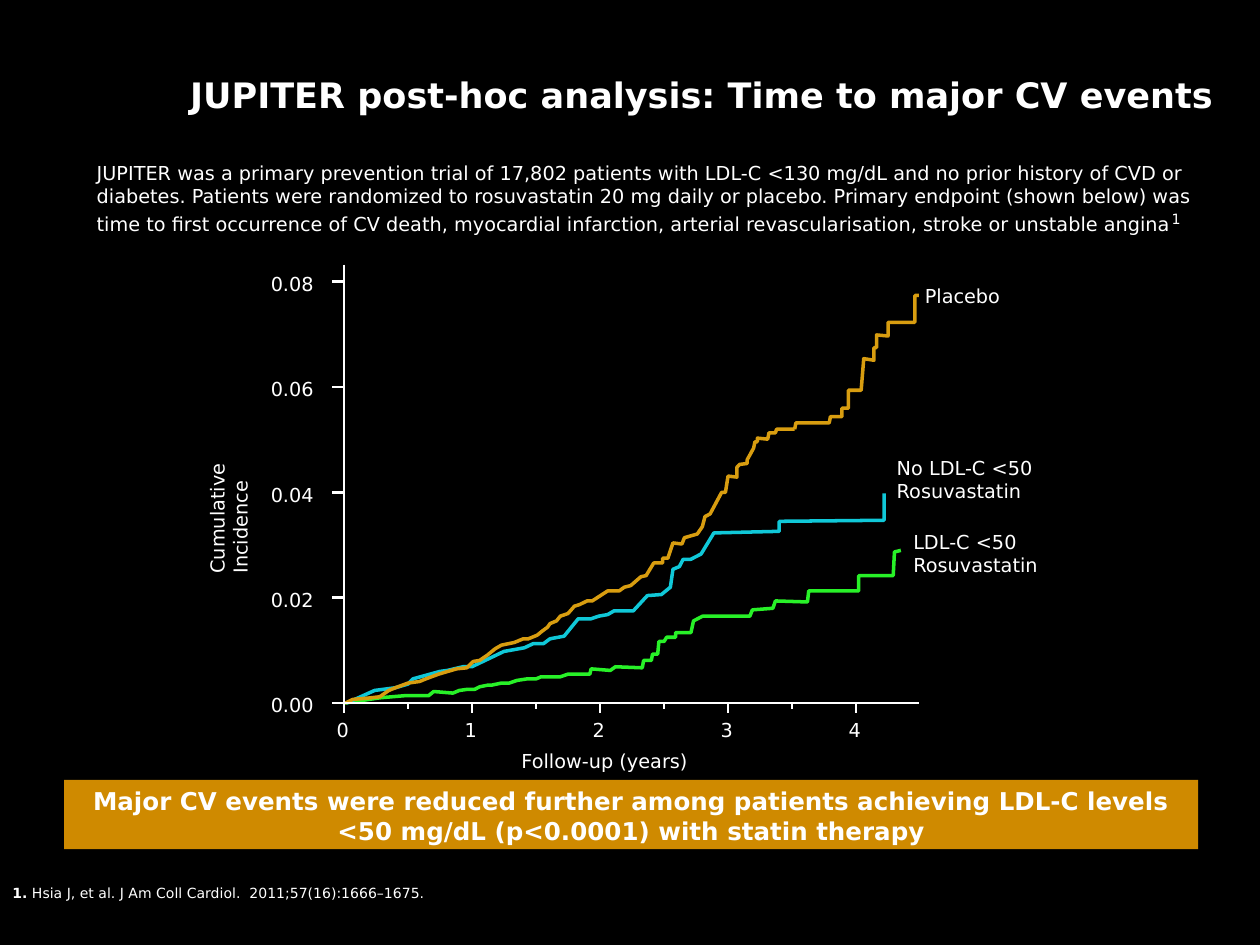
"""Build a slide with the cumulative incidence curves of the JUPITER trial."""
from typing import NamedTuple

from lxml.etree import SubElement
from pptx import Presentation
from pptx.dml.color import RGBColor
from pptx.enum.shapes import MSO_CONNECTOR, MSO_SHAPE
from pptx.enum.text import MSO_ANCHOR, PP_ALIGN
from pptx.oxml.ns import qn
from pptx.util import Pt

BLACK = RGBColor(0x00, 0x00, 0x00)
WHITE = RGBColor(0xFF, 0xFF, 0xFF)
AMBER = RGBColor(0xCF, 0x8A, 0x00)
GOLD = RGBColor(0xD8, 0x9D, 0x10)
CYAN = RGBColor(0x10, 0xC8, 0xD8)
GREEN = RGBColor(0x28, 0xF1, 0x28)
FONT = "DejaVu Sans"

LEFT, RIGHT, TOP, BASE = 196.6, 524.9, 151.2, 401.8
YEAR, MILLE = 73.15, 3.01
YEARS, RATES = range(5), range(0, 81, 20)
LONG, SHORT, STUB = 5.8, 3.6, 6.6
LINE = 18.7


class Label(NamedTuple):
    """A text with its box in points."""
    text: str
    x: float
    y: float
    wide: float
    high: float = LINE
    size: float = 11
    align: PP_ALIGN = PP_ALIGN.LEFT
    bold: bool = False
    turn: float = 0
    anchor: MSO_ANCHOR = MSO_ANCHOR.TOP


class Curve(NamedTuple):
    """Pairs of follow-up years and events per thousand patients."""
    color: RGBColor
    data: list


class Tag(NamedTuple):
    """A name set beside the last value of a curve."""
    text: str
    curve: Curve
    shift: float
    lift: float
    wide: float
    high: float


LOW = Curve(GREEN, [
    (0, 0), (0.28, 1), (0.47, 1.4), (0.66, 1.4), (0.7, 2.2), (0.85, 1.9),
    (0.9, 2.4), (0.96, 2.6), (1.02, 2.6), (1.06, 3.1), (1.12, 3.4), (1.15, 3.4),
    (1.23, 3.8), (1.29, 3.8), (1.35, 4.3), (1.43, 4.6), (1.5, 4.6), (1.54, 5),
    (1.69, 5), (1.75, 5.5), (1.92, 5.5), (1.93, 6.5), (2.08, 6.2), (2.12, 6.9),
    (2.33, 6.7), (2.34, 8.1), (2.4, 8.1), (2.41, 9.3), (2.45, 9.3), (2.46, 11.7),
    (2.5, 11.7), (2.52, 12.5), (2.59, 12.5), (2.59, 13.4), (2.71, 13.4),
    (2.73, 15.6), (2.8, 16.5), (3.17, 16.5), (3.19, 17.7), (3.35, 18),
    (3.37, 19.4), (3.62, 19.2), (3.63, 21.3), (4.02, 21.3), (4.02, 24.2),
    (4.29, 24.2), (4.3, 28.7), (4.35, 29)])
HIGH = Curve(CYAN, [
    (0.02, 0), (0.24, 2.4), (0.4, 2.9), (0.5, 3.6), (0.54, 4.6), (0.75, 6),
    (0.81, 6.2), (0.93, 6.9), (1, 6.9), (1.25, 9.8), (1.41, 10.5), (1.48, 11.3),
    (1.56, 11.3), (1.61, 12.2), (1.72, 12.7), (1.83, 16), (1.93, 16),
    (1.99, 16.5), (2.06, 16.8), (2.11, 17.5), (2.26, 17.5), (2.37, 20.4),
    (2.48, 20.6), (2.55, 22), (2.57, 25.4), (2.62, 25.9), (2.65, 27.3),
    (2.71, 27.3), (2.79, 28.3), (2.89, 32.3), (3.4, 32.6), (3.4, 34.5),
    (4.22, 34.7), (4.22, 39.8)])
EARLY = Curve(GOLD, [
    (0.01, 0), (0.07, 0.7), (0.21, 1), (0.28, 1.2), (0.35, 2.4), (0.4, 2.9),
    (0.5, 3.8), (0.59, 4.1), (0.64, 4.6), (0.74, 5.5), (0.81, 6), (0.88, 6.5),
    (0.96, 6.7), (1.01, 7.9), (1.06, 8.1), (1.12, 9.1), (1.18, 10.3), (1.23, 11),
    (1.33, 11.5), (1.4, 12.2), (1.44, 12.2), (1.51, 12.9), (1.55, 13.7),
    (1.59, 14.4), (1.61, 15.1), (1.66, 15.6), (1.69, 16.5), (1.75, 17),
    (1.8, 18.4), (1.84, 18.7), (1.9, 19.4), (1.94, 19.4), (2.06, 21.3),
    (2.15, 21.3), (2.19, 22), (2.24, 22.3), (2.32, 24), (2.36, 24.2),
    (2.42, 26.6), (2.49, 26.6), (2.49, 27.5), (2.53, 27.5), (2.57, 30.4),
    (2.64, 30.2), (2.66, 31.4), (2.76, 32.1), (2.8, 33.5), (2.82, 35.4),
    (2.86, 35.9), (2.95, 40), (2.98, 40), (3, 43.1), (3.07, 42.9), (3.07, 44.8),
    (3.09, 45.3), (3.15, 45.5), (3.15, 46.2), (3.2, 48.4), (3.21, 49.6),
    (3.23, 49.6), (3.23, 50.3), (3.31, 50.1), (3.32, 51.3), (3.37, 51.3),
    (3.38, 52), (3.52, 52)])
LATE = Curve(GOLD, [
    (3.52, 52), (3.53, 53.2), (3.79, 53.2), (3.8, 54.4), (3.89, 54.4), (3.89, 56),
    (3.94, 56), (3.94, 59.4), (4.04, 59.4), (4.06, 65.4), (4.14, 65.1),
    (4.14, 67.5), (4.16, 67.5), (4.16, 69.9), (4.25, 69.7), (4.25, 72.3),
    (4.46, 72.3), (4.46, 77.4), (4.49, 77.4)])
TAGS = [Tag("Placebo", LATE, -3.7, 9.7, 60, LINE),
        Tag("No LDL-C <50 Rosuvastatin", HIGH, 0, 25, 109.4, 33.8),
        Tag("LDL-C <50 Rosuvastatin", LOW, 0, 15, 91.4, 33.8)]

TITLE = Label("JUPITER post-hoc analysis: Time to major CV events",
              93.6, 9, 607, 90, 20, PP_ALIGN.RIGHT, True, 0, MSO_ANCHOR.MIDDLE)
CLAIM = Label("Major CV events were reduced further among patients achieving "
              "LDL-C levels <50 mg/dL (p<0.0001) with statin therapy",
              36.7, 445.7, 648, 39.6, 14, PP_ALIGN.CENTER, True)
CITE = Label("1.", 0, 501.8, 680.4, 22.3, 8)
SOURCE = " Hsia J, et al. J Am Coll Cardiol.  2011;57(16):1666–1675."
INTRO = Label(
    "JUPITER was a primary prevention trial of 17,802 patients with LDL-C <130 mg/dL "
    "and no prior history of CVD or diabetes. Patients were randomized to rosuvastatin "
    "20 mg daily or placebo. Primary endpoint (shown below) was time to first occurrence "
    "of CV death, myocardial infarction, arterial revascularisation, stroke or "
    "unstable angina", 48.2, 88.6, 652.3, 64.8)
RATE = Label("Cumulative Incidence", 61.9, 262.1, 124.6, 20.9, turn=270)
TIME = Label("Follow-up (years)", 290.9, 424.8, 116)


def across(year: float) -> float:
    """Turn follow-up years into a place from the left."""
    return LEFT + year * YEAR


def down(rate: float) -> float:
    """Turn events per thousand into a place from the top."""
    return BASE - rate * MILLE


def write(shape, label: Label):
    """Put the text of a label into a shape and return its paragraph."""
    frame = shape.text_frame
    frame.word_wrap = True
    frame.vertical_anchor = label.anchor
    para = frame.paragraphs[0]
    para.text, para.alignment = label.text, label.align
    font = para.font
    font.name, font.size, font.bold = FONT, Pt(label.size), label.bold
    font.color.rgb = WHITE
    return para


def place(slide, label: Label):
    """Add a label as a text box and return its paragraph."""
    box = slide.shapes.add_textbox(*map(Pt, label[1:5]))
    box.rotation = label.turn
    return write(box, label)


def trace(slide, curve: Curve) -> None:
    """Draw the data of a curve as an open outline."""
    first, *rest = [(Pt(across(year)), Pt(down(rate))) for year, rate in curve.data]
    pen = slide.shapes.build_freeform(*first)
    pen.add_line_segments(rest, close=False)
    shape = pen.convert_to_shape()
    shape.shadow.inherit = False
    shape.fill.background()
    shape.line.color.rgb, shape.line.width = curve.color, Pt(2)


def rule(slide, x1: float, y1: float, x2: float, y2: float) -> None:
    """Draw a straight axis line or tick."""
    line = slide.shapes.add_connector(MSO_CONNECTOR.STRAIGHT, *map(Pt, (x1, y1, x2, y2)))
    line.line.color.rgb, line.line.width = WHITE, Pt(1.5)
    SubElement(line._element.spPr, qn("a:effectLst"))


def axes(slide) -> None:
    """Draw both axes with their ticks, values and titles."""
    rule(slide, LEFT, TOP, LEFT, BASE + LONG)
    rule(slide, RIGHT, BASE, LEFT - STUB, BASE)
    for rate in RATES:
        y = down(rate)
        if rate:
            rule(slide, LEFT, y, LEFT - STUB, y)
        place(slide, Label(f"{rate / 1000:.2f}", LEFT - 51.2, y - 8.9, 41,
                           align=PP_ALIGN.RIGHT))
    for half in range(1, 2 * YEARS[-1] + 1):
        x = across(half / 2)
        rule(slide, x, BASE, x, BASE + (SHORT if half % 2 else LONG))
    for year in YEARS:
        place(slide, Label(str(year), across(year) - 11.3, BASE + 5, 22.3))
    place(slide, RATE)
    place(slide, TIME)


def main() -> None:
    """Build and save the slide."""
    deck = Presentation()
    deck.slide_width, deck.slide_height = Pt(720), Pt(540)
    slide = deck.slides.add_slide(deck.slide_layouts[6])
    fill = slide.background.fill
    fill.solid()
    fill.fore_color.rgb = BLACK

    place(slide, TITLE)
    band = slide.shapes.add_shape(MSO_SHAPE.RECTANGLE, *map(Pt, CLAIM[1:5]))
    band.shadow.inherit = False
    band.fill.solid()
    band.fill.fore_color.rgb = AMBER
    band.line.fill.background()
    write(band, CLAIM)
    cite = place(slide, CITE)
    cite.runs[0].font.bold = True
    cite.add_run().text = SOURCE

    for curve in (LOW, HIGH, EARLY, LATE):
        trace(slide, curve)
    axes(slide)
    for tag in TAGS:
        year, rate = tag.curve.data[-1]
        place(slide, Label(tag.text, across(year) + tag.shift, down(rate) - tag.lift,
                           tag.wide, tag.high))

    note = place(slide, INTRO).add_run()
    note.text, note.font.size = "1", Pt(14)
    note._r.get_or_add_rPr().set("baseline", "30000")
    deck.save("out.pptx")


if __name__ == "__main__":
    main()
